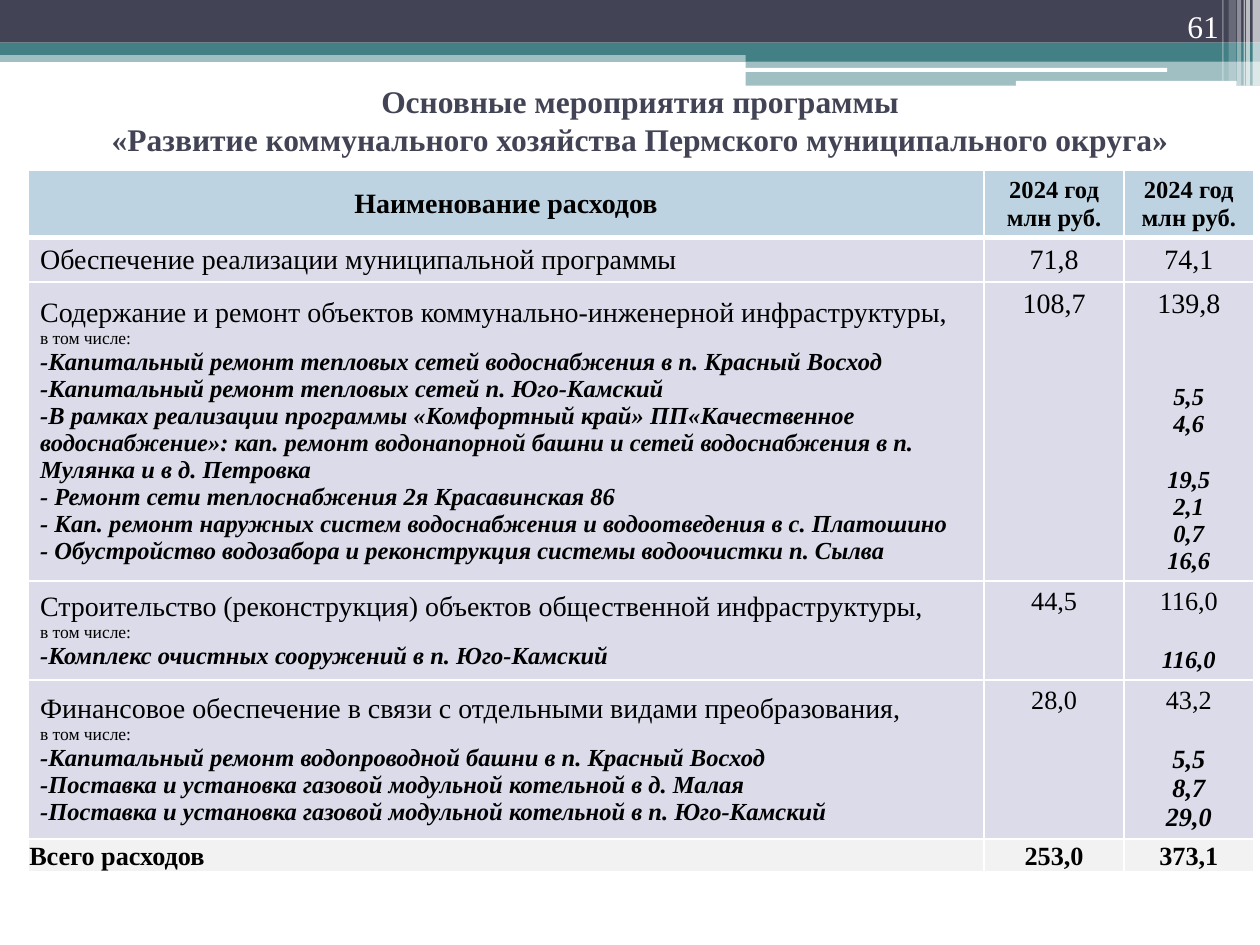
from lxml import etree
from pptx import Presentation
from pptx.dml.color import RGBColor
from pptx.enum.shapes import MSO_SHAPE
from pptx.enum.text import MSO_ANCHOR, MSO_AUTO_SIZE, PP_ALIGN
from pptx.oxml.ns import qn
from pptx.util import Cm, Pt

RECT, ROUND = MSO_SHAPE.RECTANGLE, MSO_SHAPE.ROUNDED_RECTANGLE
LEFT, CENTER, RIGHT = PP_ALIGN.LEFT, PP_ALIGN.CENTER, PP_ALIGN.RIGHT
TOP, MIDDLE, BOTTOM = MSO_ANCHOR.TOP, MSO_ANCHOR.MIDDLE, MSO_ANCHOR.BOTTOM
FONT = "Times New Roman"
NAVY, TEAL, WHITE, BLACK = "424456", "438086", "FFFFFF", "000000"
HEADER_FILL, BODY_FILL, TOTAL_FILL = "BED3E1", "DBDBE9", "F2F2F2"
LINE_HEIGHT = 1.15  # line pitch relative to the font size

# Content
TITLE = "Основные мероприятия программы\v«Развитие коммунального хозяйства Пермского муниципального округа»"
PAGE_NUMBER = "61"
HEADER = [("Наименование расходов", 16), ("2024 год\nмлн руб.", 14), ("2024 год\nмлн руб.", 14)]
INCLUDING = "в том числе:"
# Details pair a name with its amount; gap is the space in points above the amount
EXPENSES = [
    {"name": "Обеспечение реализации муниципальной программы",
     "totals": ("71,8", "74,1"), "size": 16, "anchor": MIDDLE, "details": []},
    {"name": "Содержание и ремонт объектов коммунально-инженерной инфраструктуры,",
     "totals": ("108,7", "139,8"), "size": 16, "detail_size": 14, "details": [
         ("-Капитальный ремонт тепловых сетей водоснабжения в п. Красный Восход", "5,5", 32 * LINE_HEIGHT),
         ("-Капитальный ремонт тепловых сетей п. Юго-Камский", "4,6", 0),
         ("-В рамках реализации программы «Комфортный край» ПП«Качественное водоснабжение»: "
          "кап. ремонт водонапорной башни и сетей водоснабжения в п. Мулянка и в д. Петровка",
          "19,5", 14 * LINE_HEIGHT),
         ("- Ремонт сети теплоснабжения 2я Красавинская 86", "2,1", 0),
         ("- Кап. ремонт наружных систем водоснабжения и водоотведения в с. Платошино", "0,7", 0),
         ("- Обустройство водозабора и реконструкция системы водоочистки п. Сылва", "16,6", 0)]},
    {"name": "Строительство (реконструкция) объектов общественной инфраструктуры,",
     "totals": ("44,5", "116,0"), "size": 15, "detail_size": 14, "details": [
         ("-Комплекс очистных сооружений в п. Юго-Камский", "116,0", 15 * LINE_HEIGHT)]},
    {"name": "Финансовое обеспечение в связи с отдельными видами преобразования,",
     "totals": ("28,0", "43,2"), "size": 15, "detail_size": 15, "details": [
         ("-Капитальный ремонт водопроводной башни в п. Красный Восход", "5,5", 15 * LINE_HEIGHT),
         ("-Поставка и установка газовой модульной котельной в д. Малая", "8,7", 0),
         ("-Поставка и установка газовой модульной котельной в п. Юго-Камский", "29,0", 0)]},
]
TOTAL = ["Всего расходов", "253,0", "373,1"]

# Layout in centimetres
COLUMN_WIDTHS = [19.28, 2.82, 2.61]
ROW_HEIGHTS = [1.31, 0.89, 5.97, 1.96, 3.16, 0.66]
# left, top, width, height, preset, colour, opacity in percent
BANDS = [
    (0, 1.02, 25.4, 0.23, RECT, TEAL, 50),
    (0, 0, 25.4, 0.86, RECT, NAVY, 100),
    (0, 0.86, 25.4, 0.25, RECT, TEAL, 100),
    (15.03, 0.99, 10.37, 0.25, RECT, TEAL, 100),
    (15.03, 1.23, 10.37, 0.5, RECT, TEAL, 50),
    (15.02, 1.37, 8.51, 0.08, ROUND, WHITE, 100),
    (20.48, 1.63, 4.45, 0.1, ROUND, WHITE, 100),
]
# left, width, height, opacity of the white stripes in the corner
STRIPES = [(25.25, 0.15, 1.73, 65), (25.12, 0.08, 1.73, 65), (25.07, 0.03, 1.73, 60),
           (24.94, 0.08, 1.73, 40), (24.77, 0.15, 1.63, 20), (24.64, 0.03, 1.63, 30)]


def color(value):
    return RGBColor.from_string(value)


def add_band(slide, left, top, width, height, preset, fill, opacity):
    shape = slide.shapes.add_shape(preset, Cm(left), Cm(top), Cm(width), Cm(height))
    shape.shadow.inherit = False
    shape.line.fill.background()
    shape.fill.solid()
    shape.fill.fore_color.rgb = color(fill)
    if opacity < 100:
        srgb = shape.element.spPr.find(".//" + qn("a:srgbClr"))
        etree.SubElement(srgb, qn("a:alpha"), val=str(opacity * 1000))


def write(paragraph, text, size=16, fill=BLACK, bold=False, italic=False, align=LEFT, before=0):
    paragraph.text = text
    paragraph.alignment = align
    paragraph.space_before = Pt(round(before, 1))
    font = paragraph.font
    font.name, font.size, font.bold, font.italic = FONT, Pt(size), bold, italic
    font.color.rgb = color(fill)
    for run in paragraph.runs:
        run.font.name, run.font.size, run.font.bold, run.font.italic = FONT, Pt(size), bold, italic
        run.font.color.rgb = color(fill)


def fill_cell(cell, lines, fill, anchor=MIDDLE, margins=(0.25, 0.13, 0.25, 0.13), top=1, bottom=1):
    """Write (text, format) lines into a cell and give it borders and a fill."""
    frame = cell.text_frame
    for index, (text, style) in enumerate(lines):
        write(frame.add_paragraph() if index else frame.paragraphs[0], text, **style)
    cell.vertical_anchor = anchor
    cell.margin_left, cell.margin_top, cell.margin_right, cell.margin_bottom = map(Cm, margins)
    properties = cell._tc.get_or_add_tcPr()
    for side, width in (("L", 1), ("R", 1), ("T", top), ("B", bottom)):
        border = etree.SubElement(properties, qn("a:ln" + side), w=str(Pt(width)))
        solid = etree.SubElement(border, qn("a:solidFill"))
        etree.SubElement(solid, qn("a:srgbClr"), val=WHITE)
    cell.fill.solid()
    cell.fill.fore_color.rgb = color(fill)


def add_expense_row(table, row, expense):
    details = expense["details"]
    size, anchor = expense["size"], expense.get("anchor", TOP)
    names = [(expense["name"], {})]
    if details:
        names.append((INCLUDING, {"size": 10}))
    names += [(name, {"size": 14, "bold": True, "italic": True}) for name, _, _ in details]
    previous, current = [[(value, {"size": size, "align": CENTER})] for value in expense["totals"]]
    current += [(amount, {"size": expense["detail_size"], "bold": True, "italic": True,
                          "align": CENTER, "before": gap}) for _, amount, gap in details]
    top = 3 if row == 1 else 1
    for column, lines in enumerate((names, previous, current)):
        fill_cell(table.cell(row, column), lines, BODY_FILL, anchor if column else MIDDLE, top=top)


def add_expense_table(slide):
    frame = slide.shapes.add_table(len(ROW_HEIGHTS), len(COLUMN_WIDTHS), Cm(0.56), Cm(3.44),
                                   Cm(sum(COLUMN_WIDTHS)), Cm(sum(ROW_HEIGHTS)))
    table = frame.table
    table.horz_banding = False
    for column, width in zip(table.columns, COLUMN_WIDTHS):
        column.width = Cm(width)
    for row, height in zip(table.rows, ROW_HEIGHTS):
        row.height = Cm(height)

    for column, (text, size) in enumerate(HEADER):
        style = {"size": size, "bold": True, "align": CENTER}
        fill_cell(table.cell(0, column), [(line, style) for line in text.split("\n")],
                  HEADER_FILL, bottom=3)
    for row, expense in enumerate(EXPENSES, start=1):
        add_expense_row(table, row, expense)
    for column, text in enumerate(TOTAL):
        style = {"size": 15, "bold": True, "align": CENTER if column else LEFT}
        fill_cell(table.cell(len(ROW_HEIGHTS) - 1, column), [(text, style)], TOTAL_FILL,
                  margins=(0.03, 0.03, 0.03, 0))


def main():
    presentation = Presentation()
    presentation.slide_width, presentation.slide_height = Cm(25.4), Cm(19.05)
    slide = presentation.slides.add_slide(presentation.slide_layouts[5])

    # Header decoration
    for band in BANDS:
        add_band(slide, *band)
    for left, width, height, opacity in STRIPES:
        add_band(slide, left, 0, width, height, RECT, WHITE, opacity)

    # Title
    title = slide.shapes.title
    title.left, title.top, title.width, title.height = Cm(0.41), Cm(1.52), Cm(24.99), Cm(1.8)
    title.text_frame.auto_size = MSO_AUTO_SIZE.NONE
    title.text_frame.vertical_anchor = MIDDLE
    write(title.text_frame.paragraphs[0], TITLE, size=18, fill=NAVY, bold=True, align=CENTER)

    add_expense_table(slide)

    # Page number
    number = slide.shapes.add_textbox(Cm(22.71), 0, Cm(2.11), Cm(1.02)).text_frame
    number.word_wrap = True
    number.vertical_anchor = BOTTOM
    write(number.paragraphs[0], PAGE_NUMBER, size=18, fill=WHITE, align=RIGHT)

    presentation.save("out.pptx")


if __name__ == "__main__":
    main()
